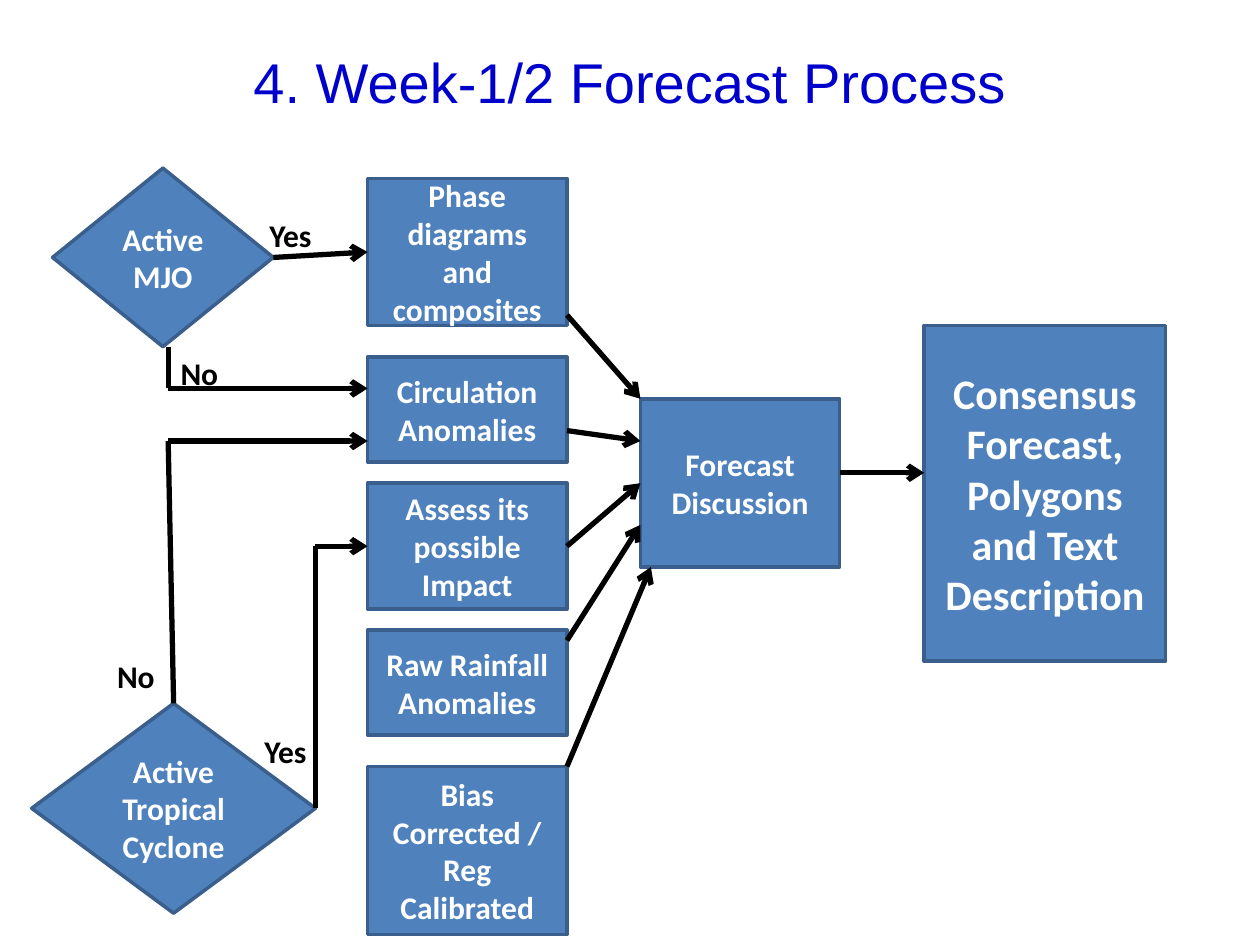
from dataclasses import dataclass

from lxml.etree import SubElement
from pptx import Presentation
from pptx.dml.color import RGBColor
from pptx.enum.shapes import MSO_CONNECTOR, MSO_SHAPE
from pptx.enum.text import MSO_ANCHOR, MSO_AUTO_SIZE, PP_ALIGN
from pptx.oxml.ns import qn
from pptx.util import Cm, Pt


@dataclass(frozen=True)
class Theme:
    fill: RGBColor = RGBColor(0x4F, 0x81, 0xBD)
    outline: RGBColor = RGBColor(0x3A, 0x5F, 0x8C)
    light: RGBColor = RGBColor(0xFF, 0xFF, 0xFF)
    dark: RGBColor = RGBColor(0, 0, 0)
    title: RGBColor = RGBColor(0, 0, 0xCC)
    title_font: str = "Arial"
    body_font: str = "Calibri"
    title_size: Pt = Pt(32)
    result_size: Pt = Pt(24)
    body_size: Pt = Pt(18)
    outline_width: Pt = Pt(2)
    arrow_width: Pt = Pt(3)


theme = Theme()
TOP, LEFT, RIGHT = 0, 1, 3


def set_text(frame, text, name, size, color, bold, alignment):
    frame.text = text
    paragraph = frame.paragraphs[0]
    paragraph.alignment = alignment
    paragraph.font.name = name
    paragraph.font.size = size
    paragraph.font.bold = bold
    paragraph.font.color.rgb = color


presentation = Presentation()
presentation.slide_width = Cm(25.4)
presentation.slide_height = Cm(19.05)
slide = presentation.slides.add_slide(presentation.slide_layouts[5])

title = slide.shapes.title
title.left, title.top, title.width, title.height = Cm(1.27), Cm(0.43), Cm(22.86), Cm(2.41)
title.text_frame.vertical_anchor = MSO_ANCHOR.MIDDLE
set_text(title.text_frame, "4. Week-1/2 Forecast Process", theme.title_font,
         theme.title_size, theme.title, False, PP_ALIGN.CENTER)

input_left, box_width = 7.41, 4.02
input_right = input_left + box_width
discussion_left = 12.91
discussion_right = discussion_left + box_width
result_left = 18.63

diamond, box = MSO_SHAPE.DIAMOND, MSO_SHAPE.RECTANGLE
steps = [
    ("Active MJO", diamond, 1.06, 3.39, 4.45, 3.6, theme.body_size),
    ("Active Tropical Cyclone", diamond, 0.64, 14.18, 5.72, 4.23, theme.body_size),
    ("Phase diagrams and composites", box, input_left, 3.6, box_width, 2.96, theme.body_size),
    ("Circulation Anomalies", box, input_left, 7.2, box_width, 2.12, theme.body_size),
    ("Assess its possible Impact", box, input_left, 9.74, box_width, 2.54, theme.body_size),
    ("Raw Rainfall Anomalies", box, input_left, 12.7, box_width, 2.12, theme.body_size),
    ("Bias Corrected / Reg Calibrated", box, input_left, 15.45, box_width, 3.39, theme.body_size),
    ("Forecast Discussion", box, discussion_left, 8.04, box_width, 3.39, theme.body_size),
    ("Consensus Forecast, Polygons and Text Description", box, result_left, 6.56, 4.87, 6.77,
     theme.result_size),
]
shapes = []
for text, kind, left, top, width, height, size in steps:
    shape = slide.shapes.add_shape(kind, Cm(left), Cm(top), Cm(width), Cm(height))
    shape.shadow.inherit = False
    shape.fill.solid()
    shape.fill.fore_color.rgb = theme.fill
    shape.line.color.rgb = theme.outline
    shape.line.width = theme.outline_width
    shape.text_frame.word_wrap = True
    shape.text_frame.vertical_anchor = MSO_ANCHOR.MIDDLE
    set_text(shape.text_frame, text, theme.body_font, size, theme.light, True, PP_ALIGN.CENTER)
    shapes.append(shape)
mjo, cyclone, phase, circulation, impact = shapes[:5]

labels = [
    ("Yes", 5.18, 4.24, 1.37),
    ("No", 3.39, 7.01, 1.27),
    ("No", 2.11, 13.13, 1.27),
    ("Yes", 5.08, 14.63, 1.37),
]
for text, left, top, width in labels:
    label = slide.shapes.add_textbox(Cm(left), Cm(top), Cm(width), Cm(1.02))
    label.text_frame.word_wrap = False
    label.text_frame.auto_size = MSO_AUTO_SIZE.SHAPE_TO_FIT_TEXT
    set_text(label.text_frame, text, theme.body_font, theme.body_size, theme.dark, True,
             PP_ALIGN.LEFT)

no_x, yes_x = 3.39, 6.36
no_mjo_y, no_cyclone_y, impact_y, result_y = 7.83, 8.89, 11.01, 9.53
links = [
    ((5.51, 5.19), (input_left, 5.08), True, (mjo, RIGHT), (phase, LEFT)),
    ((no_x, no_mjo_y), (no_x, 6.99), False, None, None),
    ((no_x, no_mjo_y), (input_left, no_mjo_y), True, None, None),
    ((3.5, 14.18), (no_x, no_cyclone_y), False, (cyclone, TOP), None),
    ((no_x, no_cyclone_y), (input_left, no_cyclone_y), True, None, None),
    ((yes_x, 16.3), (yes_x, impact_y), False, (cyclone, RIGHT), None),
    ((yes_x, impact_y), (input_left, impact_y), True, None, (impact, LEFT)),
    ((input_right, 6.35), (discussion_left, 8.04), True, None, None),
    ((input_right, 8.68), (discussion_left, 8.89), True, None, None),
    ((input_right, impact_y), (discussion_left, 9.74), True, (impact, RIGHT), None),
    ((input_right, 12.91), (discussion_left, 10.58), True, None, None),
    ((input_right, 15.45), (13.12, 11.43), True, None, None),
    ((discussion_right, result_y), (result_left, result_y), True, None, None),
]
for start, end, has_arrow, source, target in links:
    connector = slide.shapes.add_connector(
        MSO_CONNECTOR.STRAIGHT, *(Cm(value) for value in start + end))
    connector.line.color.rgb = theme.dark
    connector.line.width = theme.arrow_width
    if source:
        connector.begin_connect(*source)
    if target:
        connector.end_connect(*target)
    if has_arrow:
        SubElement(connector.line._get_or_add_ln(), qn("a:tailEnd"), type="arrow")
    SubElement(connector._element.spPr, qn("a:effectLst"))

presentation.save("out.pptx")
